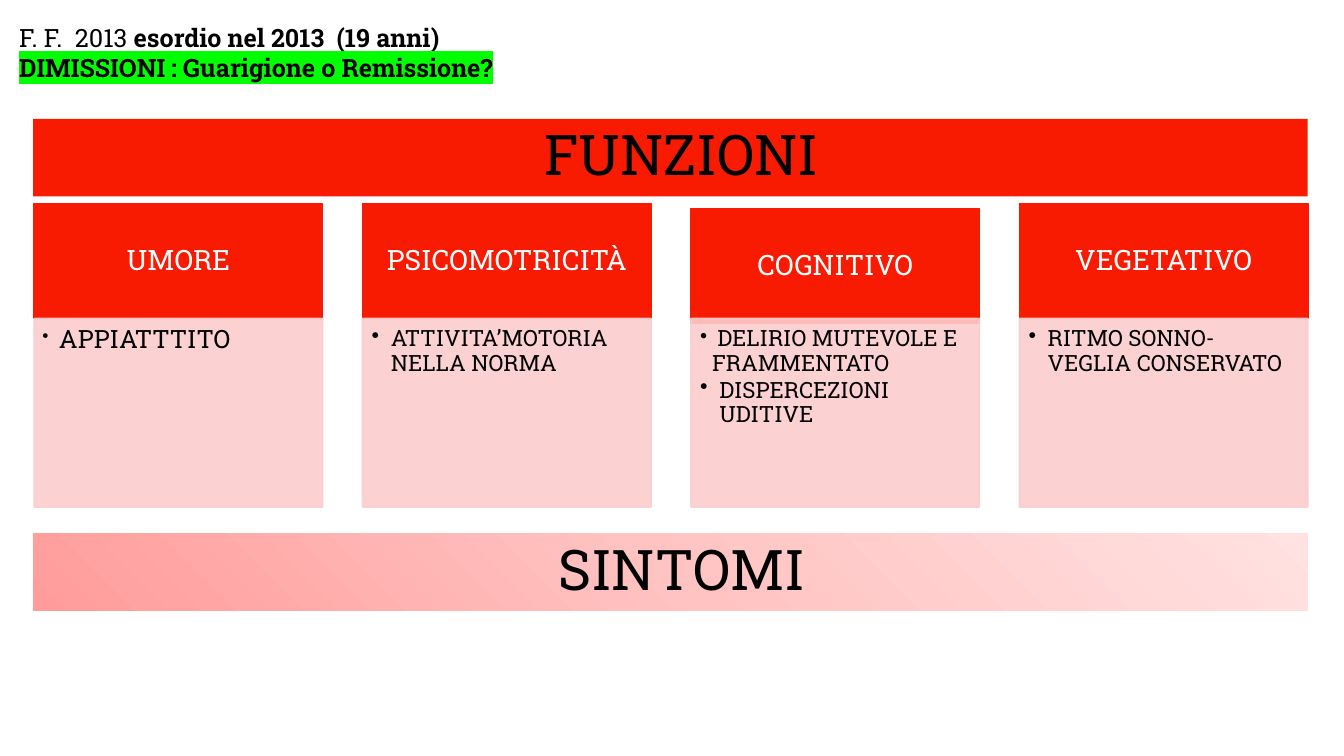
"""Build a slide that pairs four mental functions with their symptoms."""
from copy import deepcopy
from dataclasses import dataclass

from lxml import etree
from pptx import Presentation
from pptx.dml.color import RGBColor
from pptx.enum.shapes import MSO_SHAPE
from pptx.enum.text import MSO_ANCHOR, PP_ALIGN
from pptx.oxml.ns import qn
from pptx.util import Inches, Pt

RECTANGLE = MSO_SHAPE.RECTANGLE
CENTER, LEFT = PP_ALIGN.CENTER, PP_ALIGN.LEFT
TOP, MIDDLE = MSO_ANCHOR.TOP, MSO_ANCHOR.MIDDLE
FONT = "Roboto Slab"
COLORS = {
    "red": "F81B02",
    "pink": "FCCDCC",
    "black": "000000",
    "white": "FFFFFF",
    "green": "00FF00",
}
SYMPTOM_GRADIENT = ((0, "FF9C9B"), (0.5, "FFC3C2"), (1, "FFE2E1"))
BAR_LEFT, BAR_WIDTH, BAR_HEIGHT = 0.33, 12.64, 0.77
COLUMN_LEFT, COLUMN_STEP, COLUMN_WIDTH = 0.34, 3.257, 2.86
HEADER_HEIGHT, BODY_TOP, BODY_HEIGHT = 1.14, 3.16, 1.87


@dataclass(frozen=True)
class Run:
    text: str
    size: float
    color: str = "black"
    bold: bool = False
    highlight: str = ""


@dataclass(frozen=True)
class Bullet:
    runs: tuple[Run, ...]
    indent: float = 0.19


@dataclass(frozen=True)
class Column:
    heading: str
    bullets: tuple[Bullet, ...]
    header_top: float = 2.02
    body_insets: tuple[float, ...] = (0.09, 0.09, 0.12, 0.14)


COLUMNS = (
    Column("UMORE", (Bullet((Run(" ", 13), Run("APPIATTTITO", 18)), 0.12),),
           body_insets=(0.08, 0.08, 0.1, 0.11)),
    Column("PSICOMOTRICITÀ", (Bullet((Run("ATTIVITA’MOTORIA NELLA NORMA", 16),)),)),
    Column("COGNITIVO", (
        Bullet((Run(" ", 15), Run("DELIRIO MUTEVOLE E FRAMMENTATO", 16)), 0.12),
        Bullet((Run("DISPERCEZIONI UDITIVE", 16),)),
    ), header_top=2.07),
    Column("VEGETATIVO", (Bullet((Run("RITMO SONNO-VEGLIA CONSERVATO", 16),)),)),
)
TITLE_LINES = (
    (Run("F. F.  2013 ", 18), Run("esordio nel 2013  (19 anni)", 18, bold=True)),
    (Run("DIMISSIONI : Guarigione o Remissione?", 18, bold=True, highlight="green"),),
)


def rgb(name: str) -> RGBColor:
    return RGBColor.from_string(COLORS[name])


def add_run(paragraph, run: Run) -> None:
    text_run = paragraph.add_run()
    text_run.text = run.text
    font = text_run.font
    font.name, font.size, font.bold = FONT, Pt(run.size), run.bold
    font.color.rgb = rgb(run.color)
    if run.highlight:
        fill = text_run._r.get_or_add_rPr().find(qn("a:solidFill"))
        highlight = etree.Element(qn("a:highlight"))
        etree.SubElement(highlight, qn("a:srgbClr"), val=COLORS[run.highlight])
        fill.addnext(highlight)


def set_frame(shape, insets: tuple[float, ...], anchor):
    frame = shape.text_frame
    frame.word_wrap = True
    frame.vertical_anchor = anchor
    frame.margin_left, frame.margin_top, frame.margin_right, frame.margin_bottom = map(Inches, insets)
    return frame


def add_rectangle(slide, left: float, top: float, width: float, height: float):
    shape = slide.shapes.add_shape(RECTANGLE, *map(Inches, (left, top, width, height)))
    shape.shadow.inherit = False
    shape.line.fill.background()
    return shape


def paint(shape, color: str, opacity: int = 100) -> None:
    shape.fill.solid()
    shape.fill.fore_color.rgb = rgb(color)
    shape.line.color.rgb = rgb(color)
    shape.line.width = Pt(1.25)
    if opacity < 100:
        for tint in shape.element.spPr.iter(qn("a:srgbClr")):
            etree.SubElement(tint, qn("a:alpha"), val=str(opacity * 1000))


def add_centered(shape, run: Run, insets: tuple[float, ...]) -> None:
    paragraph = set_frame(shape, insets, MIDDLE).paragraphs[0]
    paragraph.alignment = CENTER
    paragraph.line_spacing = 0.9
    add_run(paragraph, run)


def add_bullet(paragraph, bullet: Bullet) -> None:
    paragraph.alignment = LEFT
    paragraph.line_spacing = 0.9
    paragraph.space_after = Pt(2)
    properties = paragraph._p.get_or_add_pPr()
    properties.set("marL", str(Inches(bullet.indent)))
    properties.set("indent", str(-Inches(bullet.indent)))
    etree.SubElement(properties, qn("a:buChar"), char="•")
    for run in bullet.runs:
        add_run(paragraph, run)


def add_column(slide, left: float, column: Column) -> None:
    header = add_rectangle(slide, left, column.header_top, COLUMN_WIDTH, HEADER_HEIGHT)
    paint(header, "red")
    add_centered(header, Run(column.heading, 20, "white"), (0.16, 0.09, 0.16, 0.09))
    body = add_rectangle(slide, left, BODY_TOP, COLUMN_WIDTH, BODY_HEIGHT)
    paint(body, "pink", 90)
    frame = set_frame(body, column.body_insets, TOP)
    for index, bullet in enumerate(column.bullets):
        add_bullet(frame.add_paragraph() if index else frame.paragraphs[0], bullet)


def add_bar(slide, top: float, label: str):
    bar = add_rectangle(slide, BAR_LEFT, top, BAR_WIDTH, BAR_HEIGHT)
    add_centered(bar, Run(label, 40), (0.32, 0.05, 0.1, 0.05))
    return bar


def paint_gradient(shape) -> None:
    shape.fill.gradient()
    shape.fill.gradient_angle = 45
    stop_list = shape.element.spPr.find(".//" + qn("a:gsLst"))
    stop_list.append(deepcopy(stop_list[0]))
    for stop, (position, color) in zip(shape.fill.gradient_stops, SYMPTOM_GRADIENT):
        stop.position = position
        stop.color.rgb = RGBColor.from_string(color)


def add_title(slide) -> None:
    box = slide.shapes.add_textbox(*map(Inches, (0.09, 0.17, 5.28, 0.71)))
    paragraph = set_frame(box, (0.1, 0.05, 0.1, 0.05), TOP).paragraphs[0]
    for index, line in enumerate(TITLE_LINES):
        if index:
            paragraph.add_line_break()
        for run in line:
            add_run(paragraph, run)


def main() -> None:
    presentation = Presentation()
    presentation.slide_width, presentation.slide_height = Inches(13.33), Inches(7.5)
    slide = presentation.slides.add_slide(presentation.slide_layouts[6])
    for index, column in enumerate(COLUMNS):
        add_column(slide, COLUMN_LEFT + index * COLUMN_STEP, column)
    functions_bar = add_bar(slide, 1.18, "FUNZIONI")
    functions_bar.fill.solid()
    functions_bar.fill.fore_color.rgb = rgb("red")
    paint_gradient(add_bar(slide, 5.29, "SINTOMI"))
    add_title(slide)
    presentation.save("out.pptx")


if __name__ == "__main__":
    main()
